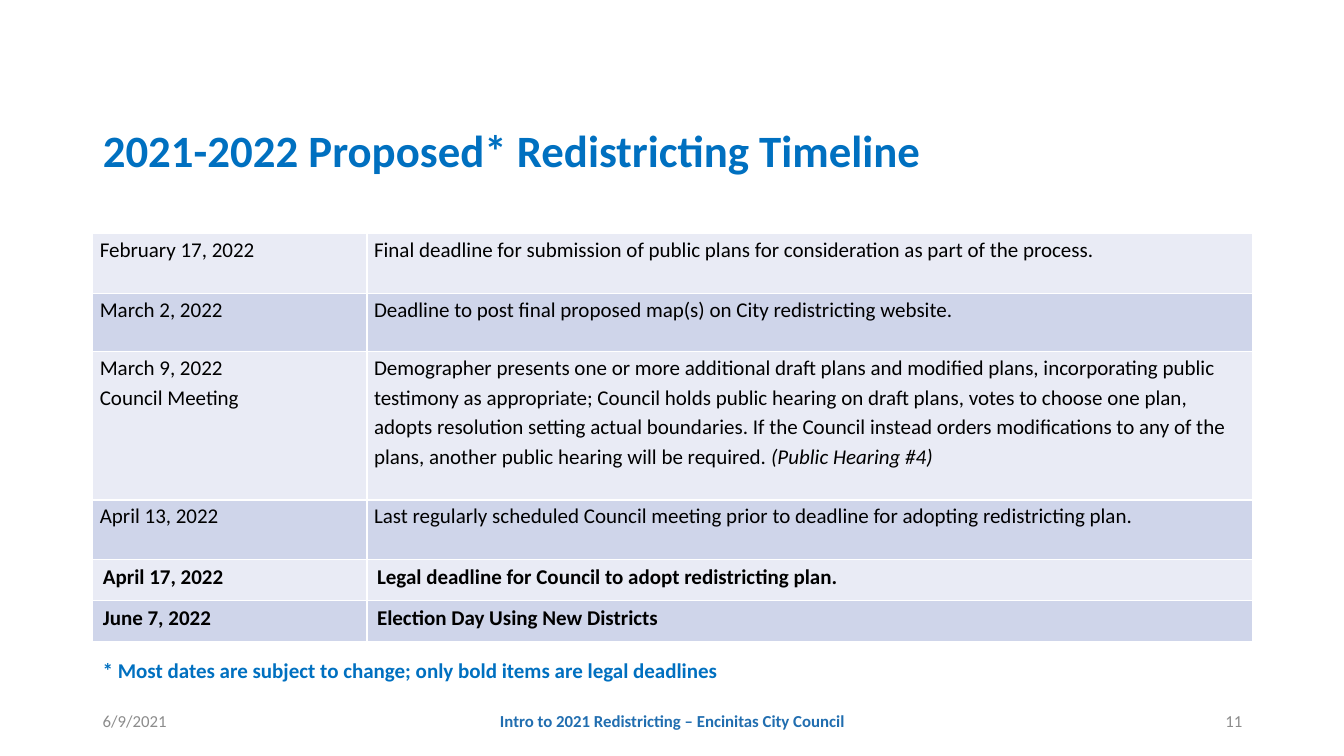
from lxml import etree
from pptx import Presentation
from pptx.dml.color import RGBColor
from pptx.enum.text import MSO_ANCHOR, MSO_AUTO_SIZE, PP_ALIGN
from pptx.oxml.ns import qn
from pptx.util import Pt

PX = 9144  # 100 px to the inch
FONT = "Calibri"
BLACK = RGBColor(0x00, 0x00, 0x00)
WHITE = RGBColor(0xFF, 0xFF, 0xFF)
BLUE = RGBColor(0x00, 0x70, 0xC0)
FOOTER_BLUE = RGBColor(0x21, 0x6E, 0xB0)
GRAY = RGBColor(0x8C, 0x8C, 0x8C)
BANDS = (RGBColor(0xE9, 0xEB, 0xF5), RGBColor(0xCF, 0xD5, 0xEA))
LEFT, CENTER, RIGHT = PP_ALIGN.LEFT, PP_ALIGN.CENTER, PP_ALIGN.RIGHT
TOP, MIDDLE = MSO_ANCHOR.TOP, MSO_ANCHOR.MIDDLE
NO_AUTOFIT = MSO_AUTO_SIZE.NONE

TITLE_BOX = (92, 118, 1150, 67)
TABLE_BOX = (92, 232, 1150, 405)
NOTE_BOX = (92, 647, 1150, 35)
FOOTER_BOX = (92, 695, 1150, 40)

DATE_WIDTH = 272
# Each row: height, date lines, description runs as (text, italic), legal deadline
TIMELINE = [
    (59, ["February 17, 2022"],
     [("Final deadline for submission of public plans for consideration "
       "as part of the process.", False)], False),
    (58, ["March 2, 2022"],
     [("Deadline to post final proposed map(s) on City redistricting website.", False)], False),
    (147, ["March 9, 2022", "Council Meeting"],
     [("Demographer presents one or more additional draft plans and modified plans, "
       "incorporating public testimony as appropriate; Council holds public hearing on "
       "draft plans, votes to choose one plan, adopts resolution setting actual boundaries. "
       "If the Council instead orders modifications to any of the plans, another public "
       "hearing will be required. ", False),
      ("(Public Hearing #4)", True)], False),
    (59, ["April 13, 2022"],
     [("Last regularly scheduled Council meeting prior to deadline for adopting "
       "redistricting plan.", False)], False),
    (41, ["April 17, 2022"],
     [("Legal deadline for Council to adopt redistricting plan.", False)], True),
    (41, ["June 7, 2022"], [("Election Day Using New Districts", False)], True),
]


def px(*lengths):
    return [length * PX for length in lengths]


def write_text(text_frame, paragraphs, size=15, color=BLACK, bold=False,
               align=LEFT, line_spacing=None, space_after=None):
    """Write paragraphs, each a list of (text, italic) runs."""
    for index, runs in enumerate(paragraphs):
        paragraph = text_frame.paragraphs[0] if index == 0 else text_frame.add_paragraph()
        paragraph.alignment = align
        if line_spacing is not None:
            paragraph.line_spacing = line_spacing
        if space_after is not None:
            paragraph.space_after = Pt(space_after)
        for text, italic in runs:
            run = paragraph.add_run()
            run.text = text
            font = run.font
            font.name, font.size = FONT, Pt(size)
            font.bold, font.italic = bold, italic
            font.color.rgb = color


def add_text_box(slide, box, text, anchor=TOP, **text_format):
    text_frame = slide.shapes.add_textbox(*px(*box)).text_frame
    text_frame.word_wrap = True
    text_frame.vertical_anchor = anchor
    write_text(text_frame, [[(text, False)]], **text_format)


def add_title(slide, box):
    title = slide.shapes.title
    title.left, title.top, title.width, title.height = px(*box)
    text_frame = title.text_frame
    text_frame.auto_size = NO_AUTOFIT
    text_frame.word_wrap = True
    text_frame.vertical_anchor = MIDDLE
    write_text(text_frame, [[("2021-2022 Proposed* Redistricting Timeline", False)]],
               size=32, color=BLUE, bold=True, line_spacing=0.9)


def add_cell_borders(cell):
    properties = cell._tc.get_or_add_tcPr()
    for side in ("lnL", "lnR", "lnT", "lnB"):
        line = etree.SubElement(properties, qn(f"a:{side}"), w=str(Pt(1)))
        fill = etree.SubElement(line, qn("a:solidFill"))
        etree.SubElement(fill, qn("a:srgbClr"), val=str(WHITE))


def fill_cell(cell, paragraphs, band, legal_deadline):
    add_cell_borders(cell)
    cell.fill.solid()
    cell.fill.fore_color.rgb = band
    if legal_deadline:
        write_text(cell.text_frame, paragraphs, bold=True, space_after=6)
    else:
        cell.margin_left, cell.margin_right = px(7, 7)
        cell.margin_top = cell.margin_bottom = 0
        write_text(cell.text_frame, paragraphs, line_spacing=1.15)


def add_timeline(slide, box):
    table = slide.shapes.add_table(len(TIMELINE), 2, *px(*box)).table
    table.first_row = table.horz_banding = False
    table.columns[0].width, table.columns[1].width = px(DATE_WIDTH, box[2] - DATE_WIDTH)
    for index, (height, dates, description, legal_deadline) in enumerate(TIMELINE):
        table.rows[index].height = height * PX
        band = BANDS[index % 2]
        date_paragraphs = [[(date, False)] for date in dates]
        fill_cell(table.cell(index, 0), date_paragraphs, band, legal_deadline)
        fill_cell(table.cell(index, 1), [description], band, legal_deadline)


def add_footer(slide, box):
    left, top, width, height = box
    side, middle = 300, 450
    add_text_box(slide, (left, top, side, height), "6/9/2021",
                 anchor=MIDDLE, size=12, color=GRAY)
    add_text_box(slide, (left + (width - middle) // 2, top, middle, height),
                 "Intro to 2021 Redistricting – Encinitas City Council",
                 anchor=MIDDLE, size=12, color=FOOTER_BLUE, bold=True, align=CENTER)
    add_text_box(slide, (left + width - side, top, side, height), "11",
                 anchor=MIDDLE, size=12, color=GRAY, align=RIGHT)


def main():
    presentation = Presentation()
    presentation.slide_width, presentation.slide_height = px(1333, 750)
    slide = presentation.slides.add_slide(presentation.slide_layouts.get_by_name("Title Only"))
    add_title(slide, TITLE_BOX)
    add_timeline(slide, TABLE_BOX)
    add_text_box(slide, NOTE_BOX,
                 "* Most dates are subject to change; only bold items are legal deadlines",
                 color=BLUE, bold=True)
    add_footer(slide, FOOTER_BOX)
    presentation.save("out.pptx")


if __name__ == "__main__":
    main()
